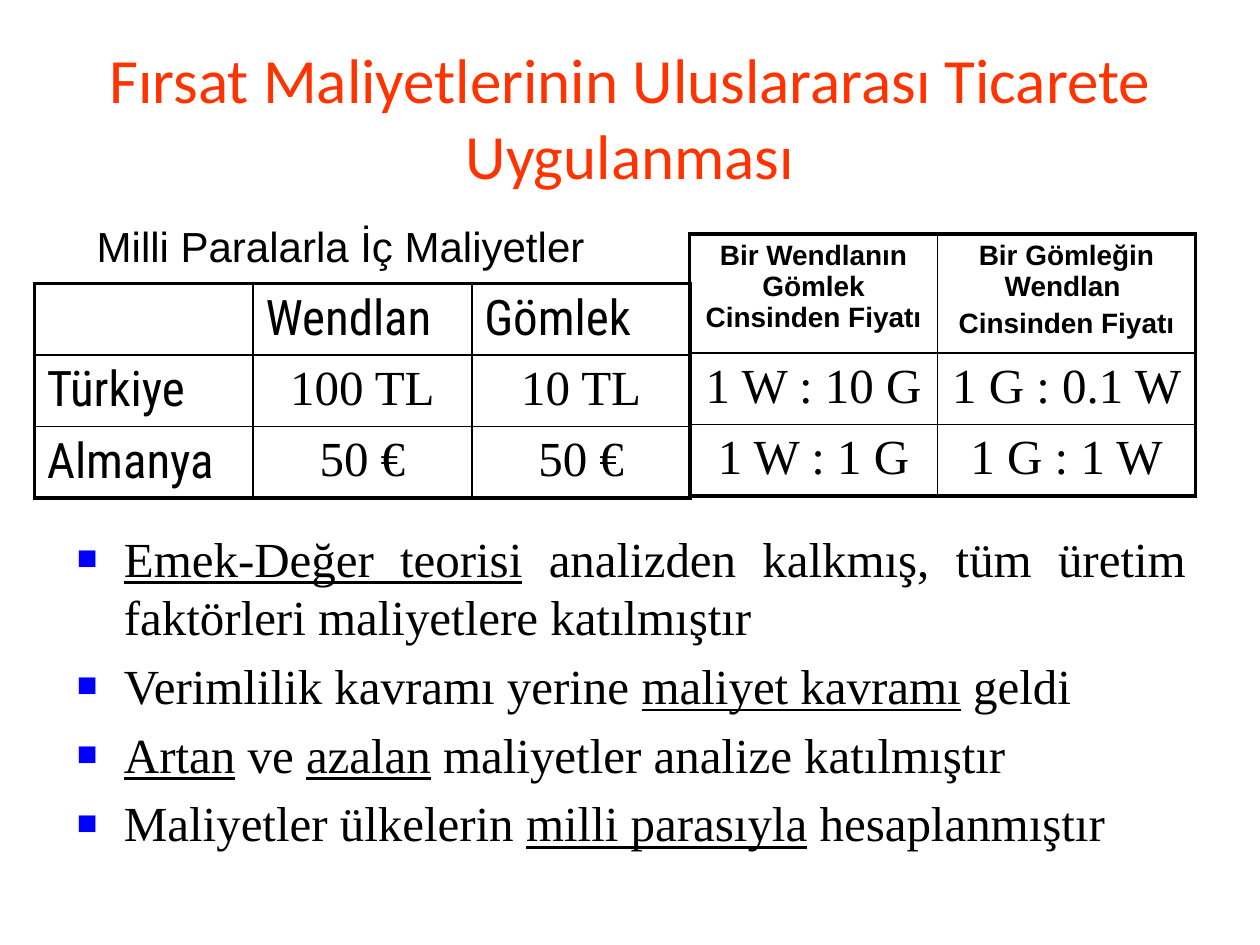
"""Build a slide comparing opportunity costs in international trade."""
from lxml import etree
from pptx import Presentation
from pptx.dml.color import RGBColor
from pptx.enum import text as t
from pptx.oxml import ns
from pptx.util import Cm, Pt

BLACK = RGBColor(0, 0, 0)
ORANGE = RGBColor(0xFF, 0x33, 0)
BLUE = RGBColor(0, 0, 0xFF)
SERIF, SANS, NARROW = "Times New Roman", "Arial", "Roboto Condensed"
LEFT, CENTER = t.PP_ALIGN.LEFT, t.PP_ALIGN.CENTER
OUTER, INNER = Pt(2.25), Pt(1)

TITLE = "Fırsat Maliyetlerinin Uluslararası Ticarete Uygulanması"
CAPTION = "Milli Paralarla İç Maliyetler"

LABEL = dict(font=NARROW, size=28, align=LEFT)
VALUE = dict(font=SERIF, size=28, align=CENTER)
HEADING = dict(font=SANS, size=16, align=CENTER, bold=True)

COSTS = [
    [("", LABEL), ("Wendlan", LABEL), ("Gömlek", LABEL)],
    [("Türkiye", LABEL), ("100 TL", VALUE), ("10 TL", VALUE)],
    [("Almanya", LABEL), ("50 €", VALUE), ("50 €", VALUE)],
]
PRICES = [
    [("Bir Wendlanın Gömlek Cinsinden Fiyatı", HEADING),
     ("Bir Gömleğin Wendlan \nCinsinden Fiyatı", HEADING)],
    [("1 W : 10 G ", VALUE), ("1 G : 0.1 W", VALUE)],
    [("1 W : 1 G", VALUE), ("1 G : 1 W", VALUE)],
]
TABLES = [
    (COSTS, 0.69, 5.72, [4.41, 4.41, 4.41], [1.44, 1.44, 1.44]),
    (PRICES, 13.9, 4.72, [5, 5.2], [2.38, 1.44, 1.44]),
]
BULLETS = [
    [("Emek-Değer teorisi", True),
     (" analizden kalkmış, tüm üretim faktörleri maliyetlere katılmıştır", False)],
    [("Verimlilik kavramı yerine ", False), ("maliyet kavramı", True), (" geldi", False)],
    [("Artan", True), (" ve ", False), ("azalan", True),
     (" maliyetler analize katılmıştır", False)],
    [("Maliyetler ülkelerin ", False), ("milli parasıyla", True),
     (" hesaplanmıştır", False)],
]


def add_run(paragraph, words, font, size, color=BLACK, bold=False, underline=False):
    run = paragraph.add_run()
    run.text = words
    run.font.name, run.font.size = font, Pt(size)
    run.font.bold, run.font.underline = bold, underline
    run.font.color.rgb = color


def add_paragraph(frame, index, size, align):
    paragraph = frame.add_paragraph() if index else frame.paragraphs[0]
    paragraph.alignment = align
    if index:
        paragraph.space_before = Pt(size * 0.2)
    return paragraph


def add_child(parent, tag, **attributes):
    return etree.SubElement(parent, ns.qn(tag), attributes)


def set_borders(cell, outer_sides):
    properties = cell._tc.get_or_add_tcPr()
    for side, is_outer in outer_sides.items():
        line = add_child(properties, f"a:ln{side}", w=str(OUTER if is_outer else INNER))
        add_child(add_child(line, "a:solidFill"), "a:srgbClr", val=str(BLACK))


def add_table(slide, rows, left, top, widths, heights):
    frame = slide.shapes.add_table(len(rows), len(widths), Cm(left), Cm(top),
                                   Cm(sum(widths)), Cm(sum(heights)))
    table = frame.table
    table.first_row = table.horz_banding = False
    for column, width in zip(table.columns, widths):
        column.width = Cm(width)
    for row, height in zip(table.rows, heights):
        row.height = Cm(height)
    for i, row in enumerate(rows):
        for j, (content, style) in enumerate(row):
            cell = table.cell(i, j)
            set_borders(cell, {"L": j == 0, "R": j == len(row) - 1,
                               "T": i == 0, "B": i == len(rows) - 1})
            cell.fill.background()
            for k, words in enumerate(content.split("\n") if content else []):
                paragraph = add_paragraph(cell.text_frame, k, style["size"], style["align"])
                add_run(paragraph, words, style["font"], style["size"],
                        bold=style.get("bold", False))


def set_bullet(paragraph):
    properties = paragraph._p.get_or_add_pPr()
    properties.set("marL", str(Cm(0.95)))
    properties.set("indent", str(-Cm(0.95)))
    add_child(add_child(properties, "a:buClr"), "a:srgbClr", val=str(BLUE))
    add_child(properties, "a:buSzPct", val="70000")
    add_child(properties, "a:buFont", typeface=SANS)
    add_child(properties, "a:buChar", char="■")


def main():
    presentation = Presentation()
    presentation.slide_width, presentation.slide_height = Cm(25.4), Cm(19.05)
    slide = presentation.slides.add_slide(presentation.slide_layouts[5])

    title = slide.shapes.title
    title.left, title.top, title.width, title.height = Cm(1.27), Cm(0.76), Cm(22.86), Cm(3.18)
    title.text_frame.vertical_anchor = t.MSO_ANCHOR.MIDDLE
    add_run(add_paragraph(title.text_frame, 0, 36, CENTER), TITLE, "Calibri", 36, ORANGE)

    caption = slide.shapes.add_textbox(Cm(1.7), Cm(4.32), Cm(10.36), Cm(1.27)).text_frame
    caption.word_wrap = False
    add_run(add_paragraph(caption, 0, 24, LEFT), CAPTION, SANS, 24)

    for table in TABLES:
        add_table(slide, *table)

    body = slide.shapes.add_textbox(Cm(1.3), Cm(10.52), Cm(22.86), Cm(7.72)).text_frame
    body.word_wrap = True
    for index, runs in enumerate(BULLETS):
        paragraph = add_paragraph(body, index, 28, t.PP_ALIGN.JUSTIFY)
        set_bullet(paragraph)
        for words, underline in runs:
            add_run(paragraph, words, SERIF, 28, underline=underline)

    presentation.save("out.pptx")


if __name__ == "__main__":
    main()
